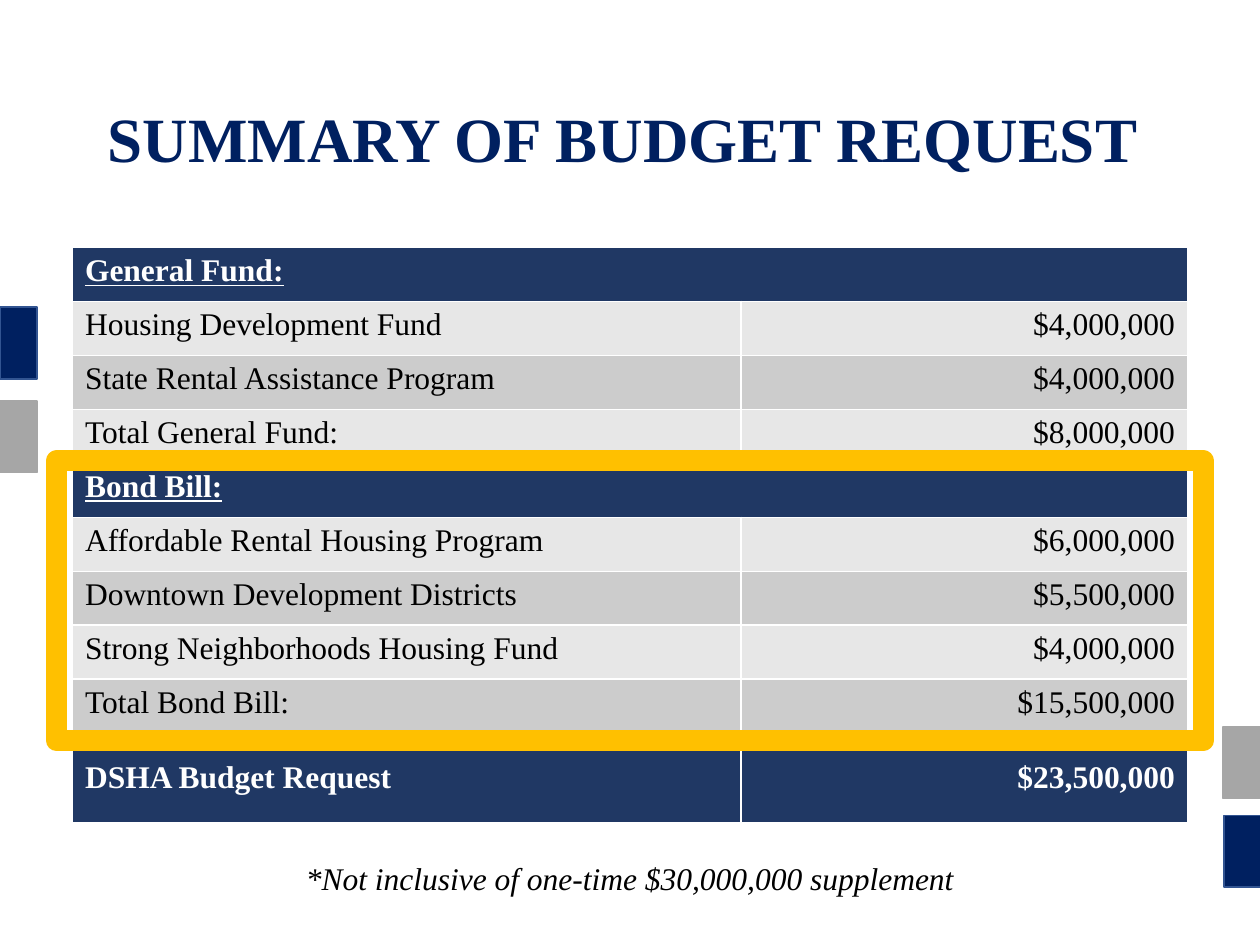
"""Builds the budget request summary slide."""
from pptx import Presentation
from pptx.dml.color import RGBColor
from pptx.enum.shapes import MSO_SHAPE
from pptx.enum.text import MSO_ANCHOR, PP_ALIGN
from pptx.util import Pt

NAVY, HEADER, GREY, GOLD = "002060", "203864", "A6A6A6", "FFC000"
WHITE, BLACK, LIGHT, DARK = "FFFFFF", "000000", "E7E7E7", "CCCCCC"

ROWS = [
    ("General Fund:",),
    ("Housing Development Fund", "$4,000,000"),
    ("State Rental Assistance Program", "$4,000,000"),
    ("Total General Fund:", "$8,000,000"),
    ("Bond Bill:",),
    ("Affordable Rental Housing Program", "$6,000,000"),
    ("Downtown Development Districts", "$5,500,000"),
    ("Strong Neighborhoods Housing Fund", "$4,000,000"),
    ("Total Bond Bill:", "$15,500,000"),
    ("DSHA Budget Request", "$23,500,000"),
]


def rgb(value):
    return RGBColor.from_string(value)


def write(tf, text, size=18, color=BLACK, bold=False, italic=False,
          underline=False, align=PP_ALIGN.LEFT, spacing=None):
    p = tf.paragraphs[0]
    p.alignment = align
    if spacing:
        p.line_spacing = spacing
    r = p.add_run()
    r.text = text
    font = r.font
    font.name, font.size = "Times New Roman", Pt(size)
    font.bold, font.italic, font.underline = bold, italic, underline
    font.color.rgb = rgb(color)


class Deck:
    def __init__(self, s):
        self.s = s

    def title(self, text, x, y, w, h):
        sp = self.s.shapes.title
        sp.left, sp.top, sp.width, sp.height = Pt(x), Pt(y), Pt(w), Pt(h)
        tf = sp.text_frame
        tf.vertical_anchor = MSO_ANCHOR.MIDDLE
        write(tf, text, size=36, color=NAVY, bold=True,
              align=PP_ALIGN.CENTER, spacing=0.9)

    def text(self, text, x, y, w, h, **fmt):
        tf = self.s.shapes.add_textbox(Pt(x), Pt(y), Pt(w), Pt(h)).text_frame
        tf.word_wrap = True
        write(tf, text, **fmt)

    def rect(self, x, y, w, h, line, weight=1, fill=None):
        sp = self.s.shapes.add_shape(MSO_SHAPE.RECTANGLE,
                                     Pt(x), Pt(y), Pt(w), Pt(h))
        sp.shadow.inherit = False
        if fill:
            sp.fill.solid()
            sp.fill.fore_color.rgb = rgb(fill)
        else:
            sp.fill.background()
        sp.line.color.rgb = rgb(line)
        sp.line.width = Pt(weight)

    def table(self, rows, x, y, widths, heights):
        table = self.s.shapes.add_table(
            len(rows), len(widths), Pt(x), Pt(y),
            Pt(sum(widths)), Pt(sum(heights))).table
        table.first_row = table.horz_banding = False
        for col, width in zip(table.columns, widths):
            col.width = Pt(width)
        for i, (values, height) in enumerate(zip(rows, heights)):
            table.rows[i].height = Pt(height)
            section, total = len(values) == 1, i == len(rows) - 1
            strong = section or total
            fill = HEADER if strong else LIGHT if i % 2 else DARK
            for cell in table.rows[i].cells:
                cell.fill.solid()
                cell.fill.fore_color.rgb = rgb(fill)
                if total:
                    cell.vertical_anchor = MSO_ANCHOR.MIDDLE
            if section:
                table.cell(i, 0).merge(table.cell(i, 1))
            for j, value in enumerate(values):
                write(table.cell(i, j).text_frame, value,
                      color=WHITE if strong else BLACK,
                      bold=strong, underline=section,
                      align=PP_ALIGN.RIGHT if j else PP_ALIGN.LEFT)


def main():
    prs = Presentation()
    prs.slide_width, prs.slide_height = Pt(720), Pt(540)
    deck = Deck(prs.slides.add_slide(prs.slide_layouts[5]))
    deck.title("SUMMARY OF BUDGET REQUEST ", 49.5, 29, 621, 104.4)
    deck.table(ROWS, 41.4, 141.4, (382, 255.2), [30.86] * 9 + [51.2])
    deck.rect(32.4, 263.3, 655.2, 159.9, GOLD, weight=12)
    for x, y, fill, line in ((699.4, 466, NAVY, "325491"),
                             (0, 175.5, NAVY, "325491"),
                             (699, 415.3, GREY, GREY),
                             (0, 229, GREY, GREY)):
        deck.rect(x, y, 21, 41, line, fill=fill)
    deck.text("*Not inclusive of one-time $30,000,000 supplement",
              41.4, 487.6, 637.2, 29, italic=True, align=PP_ALIGN.CENTER)
    prs.save("out.pptx")


if __name__ == "__main__":
    main()
